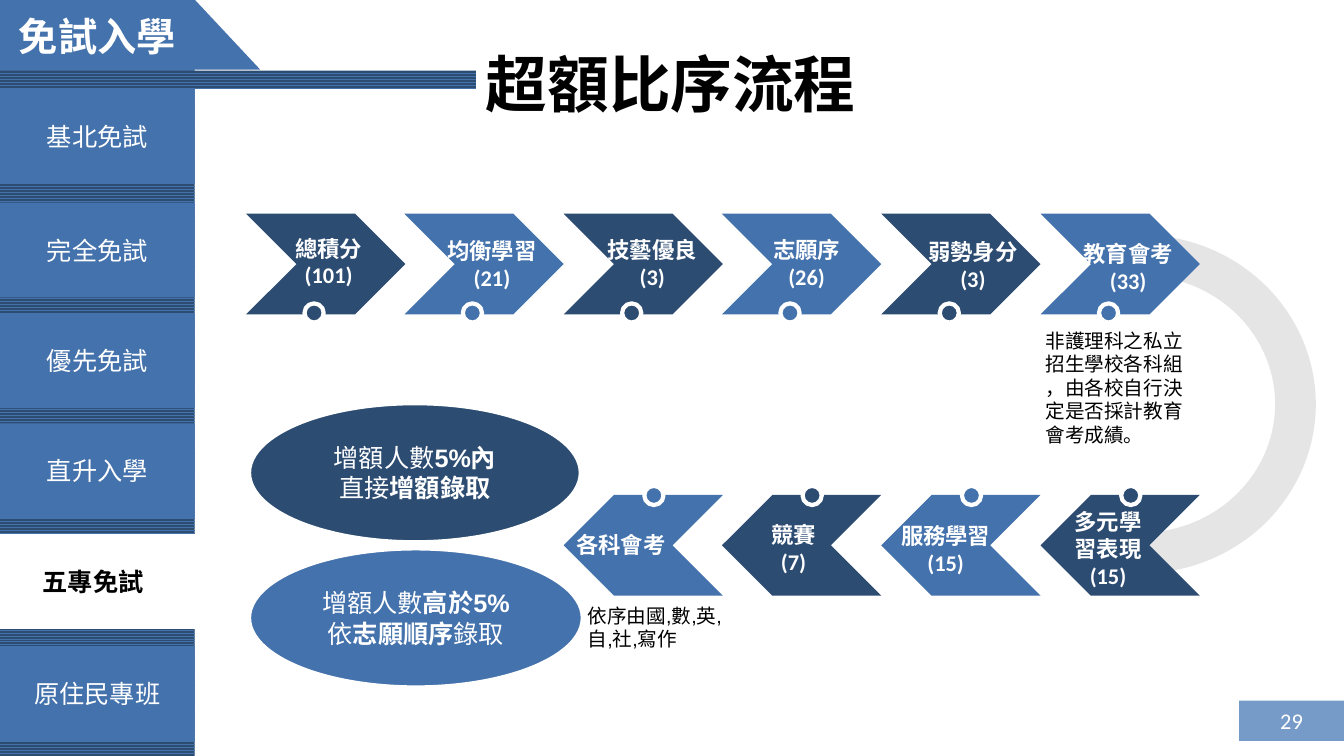
from pptx import Presentation
from pptx.dml.color import RGBColor
from pptx.enum.dml import MSO_PATTERN
from pptx.enum.shapes import MSO_SHAPE
from pptx.enum.text import MSO_ANCHOR, PP_ALIGN
from pptx.util import Pt

EMU_PER_PX = 9144  # 100 px to the inch
COLORS = {
    "blue": "4472AC",
    "navy": "2D4C72",
    "light": "769BC9",
    "gray": "E5E5E5",
    "white": "FFFFFF",
    "black": "000000",
}
TABS = [
    ("基北免試", 88), ("完全免試", 201), ("優先免試", 311),
    ("直升入學", 420), ("五專免試", 530), ("原住民專班", 641),
]
CURRENT_TAB = "五專免試"
# Label lines, centre and top of each step
TOP_STEPS = [
    (["總積分", "(101)"], 326, 228),
    (["均衡學習", "(21)"], 488, 230),
    (["技藝優良", "(3)"], 647, 229),
    (["志願序", "(26)"], 800, 229),
    (["弱勢身分", "(3)"], 965, 231),
    (["教育會考", "(33)"], 1119, 233),
]
BOTTOM_STEPS = [
    (["各科會考"], 616, 522),
    (["競賽", "(7)"], 787, 512),
    (["服務學習", "(15)"], 938, 513),
    (["多元學", "習表現", "(15)"], 1099, 499),
]
# Each run is a text and whether it is bold
OUTCOMES = [
    (400, 329, "navy", [[("增額人數", False), ("5%內", True)],
                        [("直接", False), ("增額錄取", True)]]),
    (544, 331, "blue", [[("增額人數", False), ("高於5%", True)],
                        [("依", False), ("志願順序", True), ("錄取", False)]]),
]
EXAM_NOTE = ["非護理科之私立", "招生學校各科組", "，由各校自行決", "定是否採計教育", "會考成績。"]
SUBJECT_NOTE = [["依序由國", ",", "數", ",", "英", ","], ["自", ",", "社", ",", "寫作"]]


def px(*lengths):
    return [length * EMU_PER_PX for length in lengths]


def color(name):
    return RGBColor.from_string(COLORS[name])


def style(paragraph, size, color_name, bold=False, font="Calibri", align=PP_ALIGN.CENTER):
    paragraph.alignment = align
    paragraph.font.name = font
    paragraph.font.size = Pt(size)
    paragraph.font.bold = bold
    paragraph.font.color.rgb = color(color_name)


def paragraphs(frame, count):
    return [frame.paragraphs[0]] + [frame.add_paragraph() for _ in range(count - 1)]


def write(frame, lines, size, color_name, **options):
    for paragraph, line in zip(paragraphs(frame, len(lines)), lines):
        paragraph.text = line
        style(paragraph, size, color_name, **options)


def add_block(slide, kind, box, fill, outlined=False):
    shape = slide.shapes.add_shape(kind, *px(*box))
    shape.shadow.inherit = False
    shape.fill.solid()
    shape.fill.fore_color.rgb = color(fill)
    if outlined:
        shape.line.color.rgb = color("white")
        shape.line.width = Pt(3)
    else:
        shape.line.fill.background()
    shape.text_frame.vertical_anchor = MSO_ANCHOR.MIDDLE
    return shape


def add_stripes(slide, box):
    fill = add_block(slide, MSO_SHAPE.RECTANGLE, box, "blue").fill
    fill.patterned()
    fill.pattern = MSO_PATTERN.ZIG_ZAG
    fill.fore_color.rgb = color("blue")
    fill.back_color.rgb = color("navy")


def add_text_frame(slide, box, wrap=True):
    frame = slide.shapes.add_textbox(*px(*box)).text_frame
    frame.word_wrap = wrap
    return frame


def add_tab(slide, label, top):
    current = label == CURRENT_TAB
    width = 211 if current else 193
    tab = add_block(slide, MSO_SHAPE.RECTANGLE, (0, top, width, 94),
                    "white" if current else "blue")
    if current:
        tab.text_frame.margin_right = px(36)[0]
    write(tab.text_frame, [label], 18, "black" if current else "white", bold=current)


def add_step(slide, column, step, top, dot_offset, dot_top, fill, rotation=0):
    lines, center, label_top = step
    left = 244 + column * 788 // 5
    chevron = add_block(slide, MSO_SHAPE.CHEVRON, (left, top, 158, 100), fill)
    chevron.rotation = rotation
    add_block(slide, MSO_SHAPE.OVAL, (left + dot_offset, dot_top, 19, 19), fill, outlined=True)
    frame = add_text_frame(slide, (center - 55, label_top, 110, 10 + 27 * len(lines)), wrap=False)
    write(frame, lines, 16, "white", bold=True)


def add_outcome(slide, top, width, fill, lines):
    oval = add_block(slide, MSO_SHAPE.OVAL, (247, top, width, 138), fill, outlined=True)
    for paragraph, runs in zip(paragraphs(oval.text_frame, len(lines)), lines):
        style(paragraph, 18, "white", font="Arial")
        for text, bold in runs:
            run = paragraph.add_run()
            run.text = text
            run.font.bold = bold


def add_subject_note(slide):
    frame = add_text_frame(slide, (573, 594, 154, 57))
    for paragraph, pieces in zip(paragraphs(frame, len(SUBJECT_NOTE)), SUBJECT_NOTE):
        style(paragraph, 14, "black", align=PP_ALIGN.LEFT)
        for piece in pieces:
            run = paragraph.add_run()
            run.text = piece
            run.font.name = "Arial" if piece == "," else "Calibri"


def set_title(slide):
    title = slide.shapes.title
    title.left, title.top, title.width, title.height = px(308, 45, 715, 74)
    frame = title.text_frame
    frame.margin_left = frame.margin_right = frame.margin_top = frame.margin_bottom = 0
    frame.vertical_anchor = MSO_ANCHOR.MIDDLE
    write(frame, ["超額比序流程"], 44, "black", bold=True)


def main():
    presentation = Presentation()
    presentation.slide_width, presentation.slide_height = px(1333, 750)
    slide = presentation.slides.add_slide(presentation.slide_layouts[5])
    set_title(slide)

    # Section header and page number
    add_block(slide, MSO_SHAPE.ISOSCELES_TRIANGLE, (127, -1, 131, 70), "blue")
    header = add_block(slide, MSO_SHAPE.RECTANGLE, (0, -1, 193, 74), "blue")
    write(header.text_frame, ["免試入學"], 28, "white", bold=True)
    add_stripes(slide, (0, 86, 193, 664))
    add_stripes(slide, (0, 70, 472, 18))
    page = add_block(slide, MSO_SHAPE.RECTANGLE, (1229, 695, 104, 40), "light")
    write(page.text_frame, ["29"], 16, "white")

    # Sidebar
    for label, top in TABS:
        add_tab(slide, label, top)

    # Process steps, joined by the arc on the right
    arc = add_block(slide, MSO_SHAPE.BLOCK_ARC, (963, 227, 336, 348), "gray")
    arc.rotation = 90
    for index, value in enumerate((108, 0.42, 0.12)):
        arc.adjustments[index] = value
    for column, step in enumerate(TOP_STEPS):
        add_step(slide, column, step, 212, 58, 301, ("navy", "blue")[column % 2])
    for column, step in enumerate(BOTTOM_STEPS, start=2):
        add_step(slide, column, step, 491, 80, 482, ("blue", "navy")[column % 2], rotation=180)

    # Outcomes and notes
    for outcome in OUTCOMES:
        add_outcome(slide, *outcome)
    add_subject_note(slide)
    exam_frame = add_text_frame(slide, (1027, 321, 158, 128))
    write(exam_frame, EXAM_NOTE, 14, "black", align=PP_ALIGN.LEFT)

    presentation.save("out.pptx")


if __name__ == "__main__":
    main()
